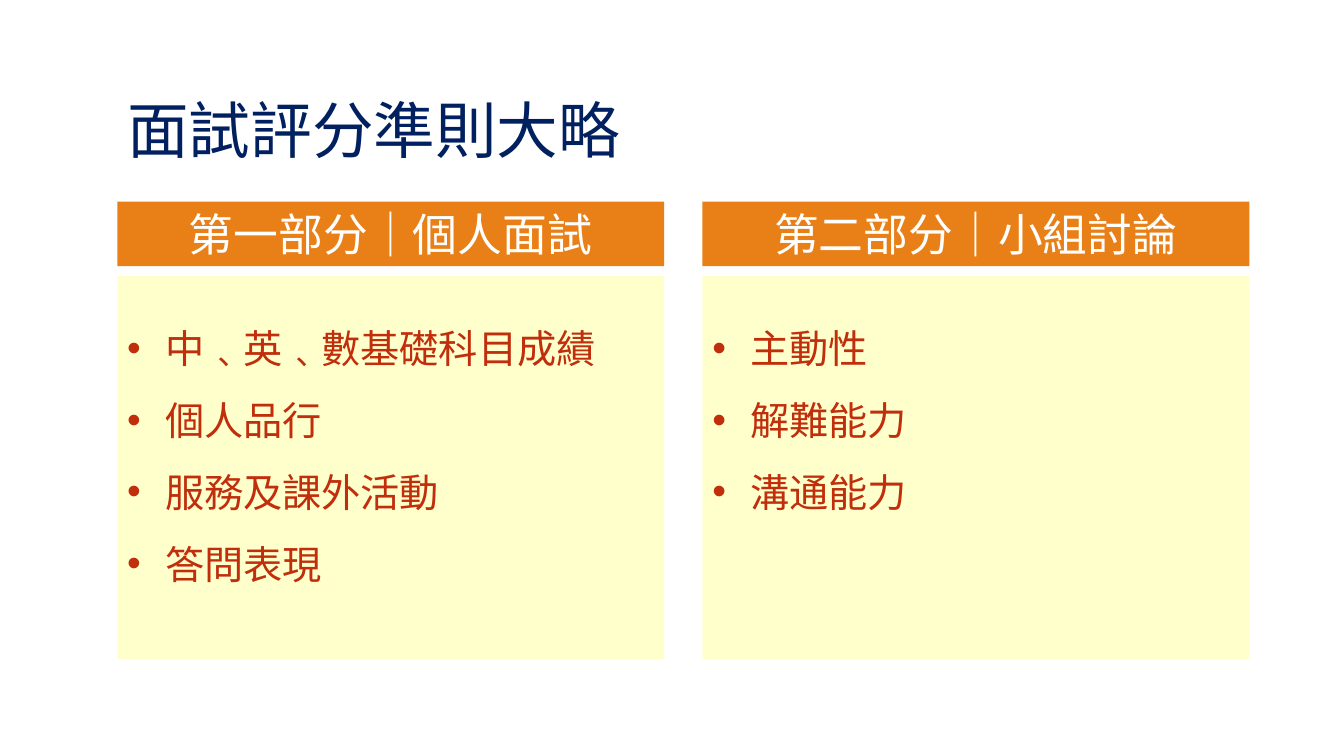
from lxml import etree
from pptx import Presentation
from pptx.dml.color import RGBColor
from pptx.enum.shapes import MSO_SHAPE
from pptx.enum.text import MSO_ANCHOR, MSO_AUTO_SIZE, PP_ALIGN
from pptx.oxml.ns import qn
from pptx.util import Pt

RECTANGLE = MSO_SHAPE.RECTANGLE
LEFT, CENTER = PP_ALIGN.LEFT, PP_ALIGN.CENTER
TOP, MIDDLE, BOTTOM = MSO_ANCHOR.TOP, MSO_ANCHOR.MIDDLE, MSO_ANCHOR.BOTTOM
NO_AUTOFIT = MSO_AUTO_SIZE.NONE

COLORS = {
    "navy": "002060",
    "orange": "E98017",
    "cream": "FFFFCC",
    "rust": "C02E0C",
    "white": "FFFFFF",
}
SC, JP = "Noto Sans CJK SC", "Noto Sans CJK JP"

TITLE = "面試評分準則大略"
PARTS = [
    ("第一部分｜個人面試", ["中﹑英﹑數基礎科目成績", "個人品行", "服務及課外活動", "答問表現"]),
    ("第二部分｜小組討論", ["主動性", "解難能力", "溝通能力"]),
]

PARTS_LEFT, PARTS_TOP = 83.8, 144
PART_WIDTH, PART_HEIGHT, PART_PITCH = 390.6, 326.8, 418
HEADING_HEIGHT, HEADING_GAP = 46.1, 7.2
BULLET_INDENT = 27


def apply(target, formats):
    for attribute, value in formats.items():
        setattr(target, attribute, value)


def format_frame(frame, anchor, top=0):
    apply(frame, {
        "word_wrap": True,
        "auto_size": NO_AUTOFIT,
        "vertical_anchor": anchor,
        "margin_left": Pt(7.2),
        "margin_right": Pt(7.2),
        "margin_top": Pt(top),
        "margin_bottom": Pt(0),
    })


def write(paragraph, text, size, face, color, **formats):
    apply(paragraph, formats)
    run = paragraph.add_run()
    run.text = text
    apply(run.font, {"size": Pt(size), "name": face})
    run.font.color.rgb = RGBColor.from_string(COLORS[color])
    east_asian = etree.Element(qn("a:ea"), typeface=face)
    run.font._element.find(qn("a:latin")).addnext(east_asian)


def add_bullet(paragraph):
    properties = paragraph._p.get_or_add_pPr()
    properties.set("marL", str(Pt(BULLET_INDENT)))
    properties.set("indent", str(-Pt(BULLET_INDENT)))
    etree.SubElement(properties, qn("a:buFont"), typeface="Arial")
    etree.SubElement(properties, qn("a:buChar"), char="•")


def add_panel(slide, left, top, width, height, color):
    panel = slide.shapes.add_shape(RECTANGLE, Pt(left), Pt(top), Pt(width), Pt(height))
    panel.shadow.inherit = False
    panel.fill.solid()
    panel.fill.fore_color.rgb = RGBColor.from_string(COLORS[color])
    panel.line.fill.background()
    return panel.text_frame


def add_title(slide, left, top, width, height):
    title = slide.shapes.title
    apply(title, {"left": Pt(left), "top": Pt(top), "width": Pt(width), "height": Pt(height)})
    format_frame(title.text_frame, BOTTOM)
    write(title.text_frame.paragraphs[0], TITLE, 44, SC, "navy",
          alignment=LEFT, line_spacing=0.9)


def add_part(slide, left, top, width, height, heading, criteria):
    heading_frame = add_panel(slide, left, top, width, HEADING_HEIGHT, "orange")
    format_frame(heading_frame, MIDDLE)
    write(heading_frame.paragraphs[0], heading, 32, JP, "white", alignment=CENTER)

    offset = HEADING_HEIGHT + HEADING_GAP
    criteria_frame = add_panel(slide, left, top + offset, width, height - offset, "cream")
    format_frame(criteria_frame, TOP, top=34.4)
    for index, criterion in enumerate(criteria):
        paragraph = criteria_frame.add_paragraph() if index else criteria_frame.paragraphs[0]
        add_bullet(paragraph)
        write(paragraph, criterion, 28, SC, "rust", alignment=LEFT,
              line_spacing=Pt(33.4), space_before=Pt(18 if index else 0))


def main():
    presentation = Presentation()
    apply(presentation, {"slide_width": Pt(960), "slide_height": Pt(540)})
    slide = presentation.slides.add_slide(presentation.slide_layouts.get_by_name("Title Only"))
    add_title(slide, PARTS_LEFT, 24, 792, 95.5)
    for index, (heading, criteria) in enumerate(PARTS):
        add_part(slide, PARTS_LEFT + index * PART_PITCH, PARTS_TOP,
                 PART_WIDTH, PART_HEIGHT, heading, criteria)
    presentation.save("out.pptx")


if __name__ == "__main__":
    main()
